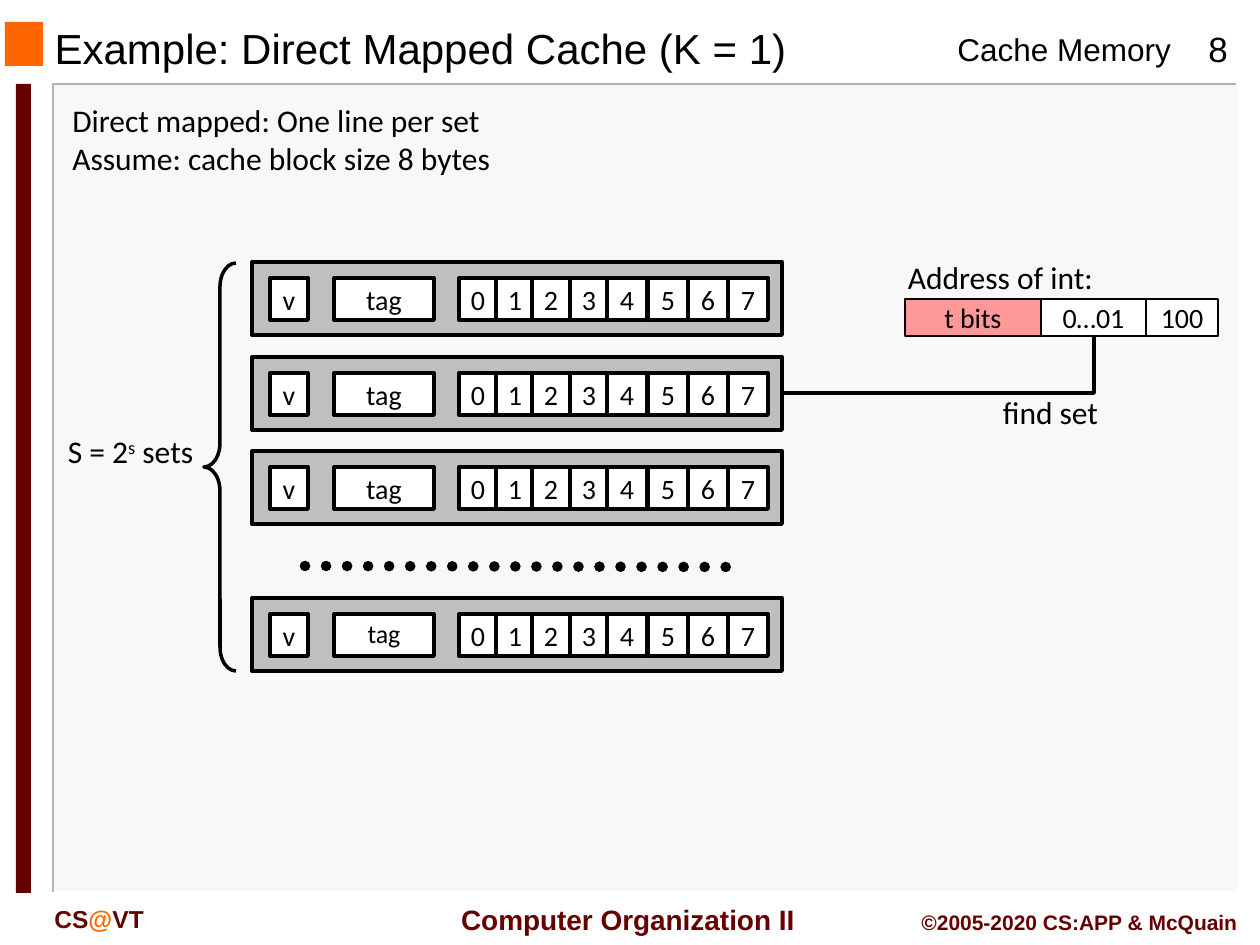
from pptx import Presentation
from pptx.dml.color import RGBColor
from pptx.enum.dml import MSO_LINE
from pptx.enum.shapes import MSO_CONNECTOR, MSO_SHAPE
from pptx.enum.text import MSO_ANCHOR, MSO_AUTO_SIZE, PP_ALIGN
from pptx.oxml import parse_xml
from pptx.oxml.ns import nsdecls
from pptx.util import Emu, Pt

BLACK = RGBColor(0x00, 0x00, 0x00)
WHITE = RGBColor(0xFF, 0xFF, 0xFF)
PANEL = RGBColor(0xF8, 0xF8, 0xF8)
EDGE = RGBColor(0xB2, 0xB2, 0xB2)
ORANGE = RGBColor(0xFF, 0x66, 0x00)
MAROON = RGBColor(0x66, 0x00, 0x00)
GRAY = RGBColor(0xBF, 0xBF, 0xBF)
PINK = RGBColor(0xFF, 0x99, 0x99)

PX_PER_INCH = 126
LEFT, CENTER, RIGHT = PP_ALIGN.LEFT, PP_ALIGN.CENTER, PP_ALIGN.RIGHT


def px(value):
    return Emu(round(value * 914400 / PX_PER_INCH))


def write(shape, text, size=18, font="Calibri", color=BLACK, bold=False,
          align=CENTER, baseline=None, spacing=None):
    frame = shape.text_frame
    for index, line in enumerate(text.split("\n")):
        paragraph = frame.add_paragraph() if index else frame.paragraphs[-1]
        paragraph.alignment = align
        if spacing:
            paragraph.line_spacing = spacing
        run = paragraph.add_run()
        run.text = line
        run.font.name = font
        run.font.size = Pt(size)
        run.font.bold = bold
        run.font.color.rgb = color
        if baseline:
            run.font._element.set("baseline", str(baseline * 1000))
    return shape


class CacheSlide:
    def __init__(self, presentation):
        self.slide = presentation.slides.add_slide(presentation.slide_layouts[5])
        self.shapes = self.slide.shapes

    def title(self, text, left, top, width, height):
        shape = self.shapes.title
        shape.left, shape.top = px(left), px(top)
        shape.width, shape.height = px(width), px(height)
        shape.text_frame.vertical_anchor = MSO_ANCHOR.MIDDLE
        shape.text_frame.auto_size = MSO_AUTO_SIZE.NONE
        write(shape, text, size=24, font="Arial", align=LEFT)

    def outline(self, shape, color, weight):
        if color is None:
            shape.line.fill.background()
        else:
            shape.line.color.rgb = color
            shape.line.width = Pt(weight)

    def box(self, left, top, width, height, fill, line=None, weight=1,
            text="", wrap=False, kind=MSO_SHAPE.RECTANGLE, **style):
        shape = self.shapes.add_shape(kind, px(left), px(top), px(width), px(height))
        shape.shadow.inherit = False
        if fill is None:
            shape.fill.background()
        else:
            shape.fill.solid()
            shape.fill.fore_color.rgb = fill
        self.outline(shape, line, weight)
        if text:
            shape.text_frame.word_wrap = wrap
            shape.text_frame.vertical_anchor = MSO_ANCHOR.MIDDLE
            write(shape, text, **style)
        return shape

    def label(self, left, top, width, height, text, wrap=False,
              anchor=MSO_ANCHOR.TOP, **style):
        shape = self.shapes.add_textbox(px(left), px(top), px(width), px(height))
        shape.text_frame.word_wrap = wrap
        shape.text_frame.vertical_anchor = anchor
        return write(shape, text, **style)

    def polyline(self, points, color, weight):
        start, *rest = [(px(x), px(y)) for x, y in points]
        builder = self.shapes.build_freeform(*start, scale=1.0)
        builder.add_line_segments(rest, close=False)
        shape = builder.convert_to_shape()
        shape.shadow.inherit = False
        shape.fill.background()
        self.outline(shape, color, weight)

    def connector(self, kind, start, end, weight):
        line = self.shapes.add_connector(kind, *map(px, start + end))
        line._element.spPr.append(parse_xml(f"<a:effectLst {nsdecls('a')}/>"))
        self.outline(line, BLACK, weight)
        return line

    def dots(self, start, end, weight):
        line = self.connector(MSO_CONNECTOR.STRAIGHT, start, end, weight)
        line.line.dash_style = MSO_LINE.ROUND_DOT
        line.line._get_or_add_ln().set("cap", "rnd")

    def down_then_left(self, start, end, weight):
        (right, top), (left, bottom) = start, end
        across, down = right - left, bottom - top
        middle_x, middle_y = (left + right) / 2, (top + bottom) / 2
        corner = (middle_x - down / 2, middle_y - across / 2)
        opposite = (middle_x + down / 2, middle_y + across / 2)
        line = self.connector(MSO_CONNECTOR.ELBOW, corner, opposite, weight)
        properties = line._element.spPr
        properties.xfrm.set("rot", "5400000")
        properties.prstGeom.set("prst", "bentConnector2")

    def cache_line(self, top, tag_style):
        self.box(252, top, 530, 73, GRAY, BLACK, 2.25)
        byte_lefts = (459, 496, 532, 570, 607, 648, 688, 728)
        cells = [(left, 38 if byte < 4 else 40, str(byte), {"size": 16})
                 for byte, left in enumerate(byte_lefts)]
        cells += [(334, 100, "tag", tag_style), (270, 38, "v", {"size": 16})]
        for left, width, text, style in cells:
            self.box(left, top + 16, width, 42, WHITE, BLACK, 2.25, text, **style)


def main():
    presentation = Presentation()
    presentation.slide_width, presentation.slide_height = px(1260), px(945)
    page = CacheSlide(presentation)

    page.box(54, 84, 1184, 808, PANEL)
    page.polyline([(1236, 84), (53, 84), (53, 892)], EDGE, 1)
    page.polyline([(1239, 84), (1239, 892), (55, 892)], WHITE, 1)
    page.box(5, 22, 38, 44, ORANGE)
    page.box(16, 84, 15, 809, MAROON)

    page.label(945, 24, 241, 50, "Cache Memory", font="Arial", align=LEFT)
    page.label(1176, 21, 84, 54, "8", wrap=True, size=20, font="Arial")
    footer = {"font": "Arial", "color": MAROON, "bold": True}
    page.label(438, 896, 372, 47, " Computer Organization II",
               anchor=MSO_ANCHOR.MIDDLE, size=16, **footer)
    course = page.label(42, 898, 189, 42, "CS", wrap=True, size=14, align=LEFT, **footer)
    write(course, "@", size=14, align=LEFT, **{**footer, "color": ORANGE})
    write(course, "VT", size=14, align=LEFT, **footer)
    page.label(903, 903, 347, 38, "©2005-2020 CS:APP & McQuain", wrap=True,
               size=12, align=RIGHT, **footer)
    page.title("Example: Direct Mapped Cache (K = 1)", 42, 24, 798, 48)

    brace = page.box(204, 263, 32, 408, None, BLACK, 2, kind=MSO_SHAPE.LEFT_BRACE)
    brace.adjustments[0] = 0.75
    sets = page.label(53, 426, 155, 50, "S = 2")
    write(sets, "s", baseline=30)
    write(sets, " sets")
    page.dots((305, 566), (735, 567), 6)
    page.label(60, 95, 455, 89,
               "Direct mapped: One line per set\nAssume: cache block size 8 bytes",
               align=LEFT)

    address_fields = ((905, 136, "t bits", PINK), (1041, 105, "0…01", WHITE),
                      (1146, 72, "100", WHITE))
    for left, width, text, fill in address_fields:
        page.box(left, 299, width, 37, fill, BLACK, 1, text, wrap=True, size=16)
    page.label(892, 252, 217, 50, "Address of int:")

    for top in (451, 357, 262):
        page.cache_line(top, {"size": 16})
    page.cache_line(598, {"size": 14.8, "spacing": 0.9})
    page.down_then_left((1094, 336), (782, 393), 2)
    page.label(989, 387, 123, 50, "find set")

    presentation.save("out.pptx")


if __name__ == "__main__":
    main()
